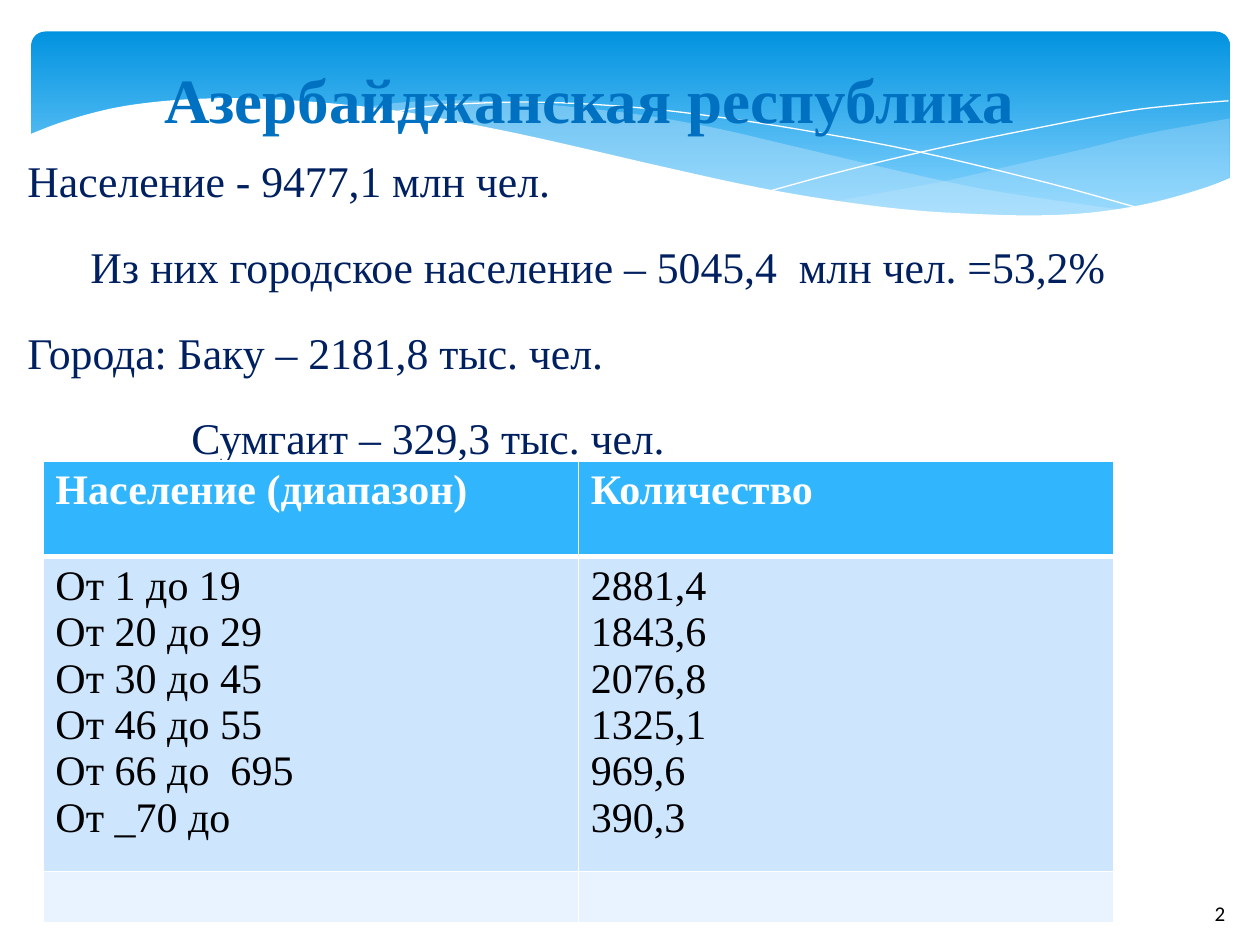
from lxml import etree
from pptx import Presentation
from pptx.dml.color import RGBColor
from pptx.enum.shapes import MSO_SHAPE
from pptx.enum.text import MSO_ANCHOR, PP_ALIGN
from pptx.oxml.ns import qn
from pptx.util import Pt

ROUNDED = MSO_SHAPE.ROUNDED_RECTANGLE
CENTER = PP_ALIGN.CENTER
MIDDLE = MSO_ANCHOR.MIDDLE
SERIF = "Times New Roman"
SANS = "Calibri"

COLORS = {
    "sky_top": "0293E0", "sky_bottom": "83D3FE", "glow": "C6E7FC",
    "white": "FFFFFF", "black": "000000", "title": "0070C0", "facts": "002060",
    "header": "31B6FD", "body": "CEE5FE", "footer": "E8F3FF",
}

WAVE_EDGE = [
    (-1.4, 59), (15, 52.6), (36.7, 46.1), (58.3, 41.8), (87, 38.9), (121, 38.2),
    (162, 40.3), (209.5, 45.4), (263.5, 55.4), (303.8, 64.1), (363, 77.8),
    (416, 89.3), (463, 97.2), (504.7, 102.2), (542, 104.4), (574.6, 105.1),
    (603.4, 103.7), (629.3, 100.1), (651.6, 95), (672.5, 88.6), (685.4, 83.5),
]
RIGHT_TOP = [
    (684.7, 49.7), (664.6, 53.3), (634.3, 59), (602, 67), (561.6, 76.3),
    (524.2, 85), (490.3, 91.4), (458, 97.2),
]
RIGHT_BOTTOM = [
    (458, 97.2), (489.6, 100.8), (527, 104.4), (568, 105.8), (603.4, 104.4),
    (633.6, 99.4), (660.2, 92.9), (684.7, 83.5),
]
LONG_TOP = [
    (625, 102.2), (584.6, 96.5), (540, 89.3), (490.3, 78.5), (435, 65.5),
    (391.7, 55.4), (352, 48.2), (316.8, 43.9), (284.4, 41), (255.6, 39.6),
    (229.7, 39.6), (207.4, 41), (188, 43.9),
]
LONG_BOTTOM = [
    (188, 43.9), (228.2, 49.7), (273, 58.3), (305.3, 65.5), (363.6, 79.2),
    (414.7, 90), (460.8, 97.9), (501.8, 103), (538.6, 105.8), (571, 106.6),
    (599, 105.1), (625, 102.2),
]
FALLING_LINE = [
    (204.5, 46.8), (229.7, 42.5), (281.5, 40.3), (334, 42.5), (382.3, 47.5),
    (440, 56.2), (505.4, 68.4), (580.3, 86.4), (635, 101.5),
]
RISING_LINE = [
    (423.4, 90.7), (465.8, 79.2), (520.6, 66.2), (584, 53.3), (626.4, 45.4),
    (657.4, 41.8), (684, 39.6),
]

FACTS = [
    ("Население - 9477,1 млн чел.", 0),
    ("Из них городское население – 5045,4  млн чел. =53,2%", 36),
    ("Города: Баку – 2181,8 тыс. чел.", 0),
    ("Сумгаит – 329,3 тыс. чел.", 93.75),
]
AGES = ["От 1 до 19", "От 20 до 29", "От 30 до 45", "От 46 до 55",
        "От 66 до  695", "От _70 до"]
COUNTS = ["2881,4", "1843,6", "2076,8", "1325,1", "969,6", "390,3"]
TABLE_ROWS = [
    (54.5, "header", "white", True, ["Население (диапазон)", "Количество"]),
    (180, "body", "black", False, ["\n".join(AGES), "\n".join(COUNTS)]),
    (29, "footer", "black", False, ["", ""]),
]


def rgb(name):
    return RGBColor.from_string(COLORS[name])


def set_font(font, size, color, name=SERIF, bold=False):
    font.size = Pt(size)
    font.name = name
    font.bold = bold
    font.color.rgb = rgb(color)


def smooth(anchors, steps=5):
    padded = [anchors[0], *anchors, anchors[-1]]
    points = [anchors[0]]
    for a, b, c, d in zip(padded, padded[1:], padded[2:], padded[3:]):
        for step in range(1, steps + 1):
            t = step / steps
            points.append(tuple(
                q + t * (r - p) / 2 + t * t * (2 * p - 5 * q + 4 * r - s) / 2
                + t ** 3 * (3 * q - p - 3 * r + s) / 2
                for p, q, r, s in zip(a, b, c, d)))
    return points


def add_outline(page, left, top, points, close):
    placed = [(Pt(left + x), Pt(top + y)) for x, y in points]
    builder = page.shapes.build_freeform(*placed[0])
    builder.add_line_segments(placed[1:], close=close)
    shape = builder.convert_to_shape()
    shape.shadow.inherit = False
    return shape


def add_area(page, left, top, points, color, opacity=100):
    shape = add_outline(page, left, top, points, True)
    shape.fill.solid()
    shape.fill.fore_color.rgb = rgb(color)
    shape.line.fill.background()
    if opacity < 100:
        tint = shape.fill._xPr.find(".//" + qn("a:srgbClr"))
        etree.SubElement(tint, qn("a:alpha"), val=str(opacity * 1000))


def add_wave_banner(page, left, top, width, height):
    sky = page.shapes.add_shape(ROUNDED, Pt(left), Pt(top), Pt(width), Pt(height))
    sky.adjustments[0] = 0.07
    sky.shadow.inherit = False
    sky.line.fill.background()
    sky.fill.gradient()
    sky.fill.gradient_angle = 270
    stops = zip(sky.fill.gradient_stops, ("sky_top", "sky_bottom"), (0, 0.9))
    for stop, color, position in stops:
        stop.color.rgb = rgb(color)
        stop.position = position

    add_area(page, left, top, smooth(RIGHT_TOP) + smooth(RIGHT_BOTTOM), "glow", 29)
    add_area(page, left, top, smooth(LONG_TOP) + smooth(LONG_BOTTOM), "glow", 40)
    for anchors in (FALLING_LINE, RISING_LINE):
        curve = add_outline(page, left, top, smooth(anchors), False)
        curve.fill.background()
        curve.line.color.rgb = rgb("white")
        curve.line.width = Pt(0)
    below = [(width + 0.7, height + 31), (-1.4, height + 31)]
    add_area(page, left, top, smooth(WAVE_EDGE) + below, "white")


def add_text(page, left, top, width, height, text, wrap=True):
    box = page.shapes.add_textbox(Pt(left), Pt(top), Pt(width), Pt(height))
    box.text_frame.word_wrap = wrap
    box.text_frame.text = text
    return box.text_frame


def add_title(page, left, top, width, height):
    para = add_text(page, left, top, width, height,
                    "Азербайджанская республика").paragraphs[0]
    para.alignment = CENTER
    set_font(para.runs[0].font, 36, "title", bold=True)


def add_facts(page, left, top, width, height):
    frame = add_text(page, left, top, width, height,
                     "\n".join(text for text, _ in FACTS))
    frame.vertical_anchor = MIDDLE
    for para, (_, indent) in zip(frame.paragraphs, FACTS):
        para._p.get_or_add_pPr().set("marL", str(Pt(indent)))
        para.space_after = Pt(19)
        set_font(para.runs[0].font, 25, "facts")


def add_page_number(page, left, top, width, height):
    frame = add_text(page, left, top, width, height, "2", wrap=False)
    set_font(frame.paragraphs[0].runs[0].font, 12, "black", SANS)


def add_border(cell, side, width):
    line = etree.SubElement(cell._tc.get_or_add_tcPr(), qn("a:" + side),
                            w=str(Pt(width)))
    fill = etree.SubElement(line, qn("a:solidFill"))
    etree.SubElement(fill, qn("a:srgbClr"), val=COLORS["white"])


def add_population_table(page, left, top, width, height):
    table = page.shapes.add_table(len(TABLE_ROWS), 2, Pt(left), Pt(top),
                                  Pt(width), Pt(height)).table
    for column in table.columns:
        column.width = Pt(width / 2)
    for index, (row_height, fill, color, bold, texts) in enumerate(TABLE_ROWS):
        table.rows[index].height = Pt(row_height)
        for cell, text in zip(table.rows[index].cells, texts):
            for side in ("lnL", "lnR", "lnT", "lnB"):
                heavy = (index, side) in ((0, "lnB"), (1, "lnT"))
                add_border(cell, side, 3 if heavy else 1)
            cell.fill.solid()
            cell.fill.fore_color.rgb = rgb(fill)
            cell.text_frame.text = text
            for para in cell.text_frame.paragraphs:
                for span in para.runs:
                    set_font(span.font, 24, color, bold=bold)


def main():
    deck = Presentation()
    deck.slide_width, deck.slide_height = Pt(720), Pt(540)
    page = deck.slides.add_slide(deck.slide_layouts[6])
    add_wave_banner(page, 18, 18, 684.7, 112)
    add_title(page, 25, 31, 623.5, 51)
    add_page_number(page, 687, 511, 26.6, 21.6)
    add_facts(page, 8.6, 88.6, 699, 175.7)
    add_population_table(page, 24.5, 263.5, 612, 263.5)
    deck.save("out.pptx")


if __name__ == "__main__":
    main()
